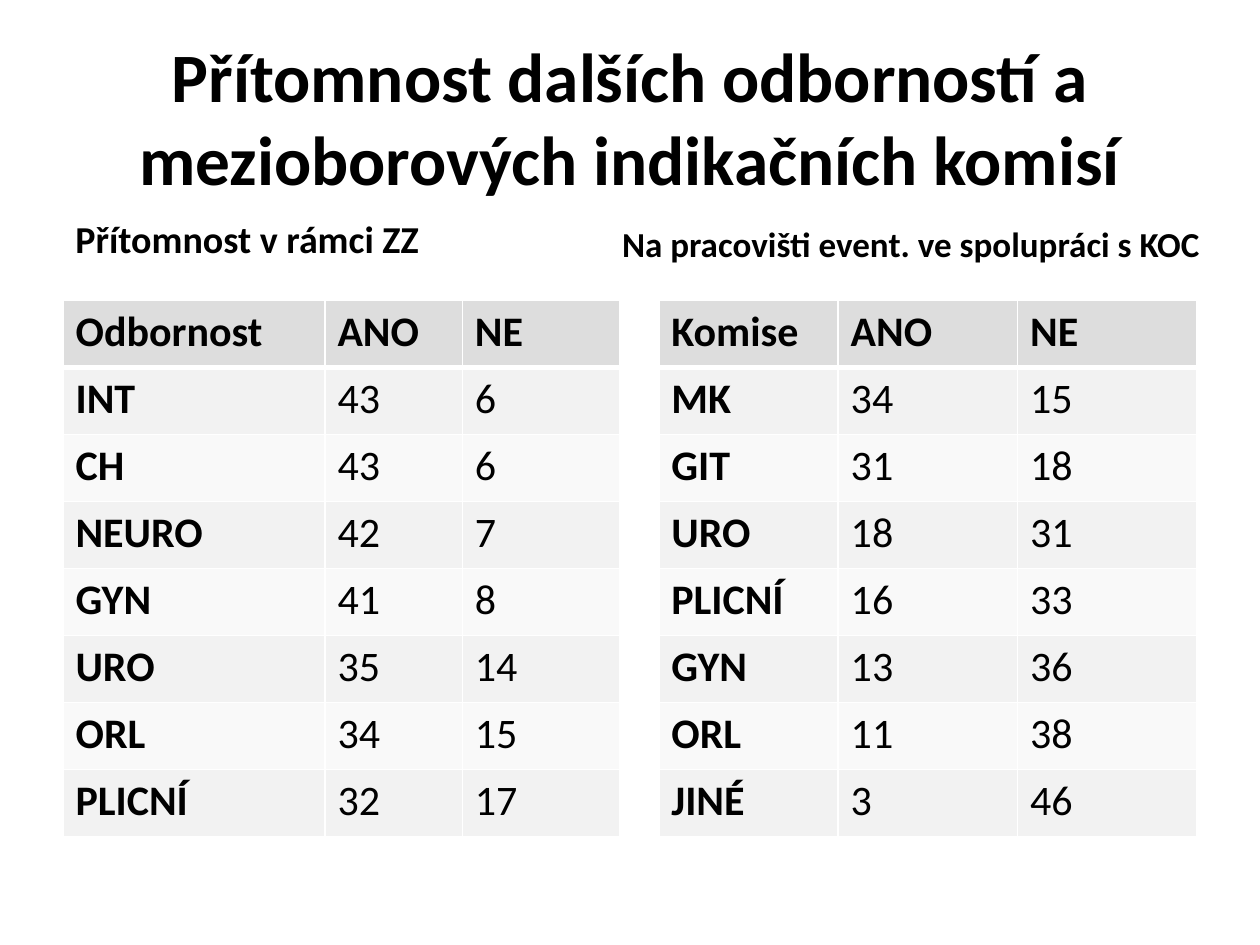
import pptx
import pptx.dml.color
import pptx.enum.text
import pptx.oxml
import pptx.oxml.ns
import pptx.util

Cm, Pt = pptx.util.Cm, pptx.util.Pt
Align = pptx.enum.text.PP_ALIGN
Anchor = pptx.enum.text.MSO_ANCHOR

HUES = {"ink": "000000", "rule": "FFFFFF", "head": "DDDDDD",
        "odd": "F2F2F2", "even": "F9F9F9"}
TITLE = "Přítomnost dalších odborností a mezioborových indikačních komisí"
PANELS = [
    {"text": "Přítomnost v rámci ZZ", "size": 21.7, "inset": 0.78,
     "label": (1.27, 4.27, 11.23, 1.78), "grid": (1.27, 6.05, 11.23, 10.82),
     "parts": (5.28, 2.77, 3.18),
     "rows": [("Odbornost", "ANO", "NE"), ("INT", 43, 6), ("CH", 43, 6),
              ("NEURO", 42, 7), ("GYN", 41, 8), ("URO", 35, 14),
              ("ORL", 34, 15), ("PLICNÍ", 32, 17)]},
    {"text": "Na pracovišti event. ve spolupráci s KOC", "size": 20, "inset": 0.72,
     "label": (12.29, 4.27, 13.11, 1.78), "grid": (13.28, 6.05, 10.85, 10.82),
     "parts": (1, 1, 1),
     "rows": [("Komise", "ANO", "NE"), ("MK", 34, 15), ("GIT", 31, 18),
              ("URO", 18, 31), ("PLICNÍ", 16, 33), ("GYN", 13, 36),
              ("ORL", 11, 38), ("JINÉ", 3, 46)]},
]


def color(name):
    """Return the named colour."""
    return pptx.dml.color.RGBColor.from_string(HUES[name])


def apply(item, values):
    """Set each attribute of item from a dict."""
    for key, value in values.items():
        setattr(item, key, value)


def write(frame, text, size, bold=True, align=Align.LEFT):
    """Fill a text frame with one styled paragraph."""
    para = frame.paragraphs[0]
    para.alignment = align
    run = para.add_run()
    run.text = str(text)
    apply(run.font, {"name": "Calibri", "size": Pt(size), "bold": bold})
    run.font.color.rgb = color("ink")


def add_text(slide, box, text, size, frame, align=Align.LEFT):
    """Place a wrapped text box with the given frame values."""
    shape = slide.shapes.add_textbox(*map(Cm, box))
    apply(shape.text_frame, {"word_wrap": True, **frame})
    write(shape.text_frame, text, size, align=align)


def add_rules(cell, row):
    """Draw the cell borders, thick between head and body."""
    wide = {"L": 1, "R": 1, "T": 3 if row == 1 else 1, "B": 3 if row == 0 else 1}
    for side, width in wide.items():
        cell._tc.get_or_add_tcPr().append(pptx.oxml.parse_xml(
            f'<a:ln{side} {pptx.oxml.ns.nsdecls("a")} w="{Pt(width)}"><a:solidFill>'
            f'<a:srgbClr val="{HUES["rule"]}"/></a:solidFill></a:ln{side}>'))


def add_grid(slide, box, rows, parts):
    """Place a table in the box, with columns split by parts."""
    table = slide.shapes.add_table(len(rows), len(parts), *map(Cm, box)).table
    for col, part in zip(table.columns, parts):
        col.width = Cm(box[2] * part / sum(parts))
    for r, row in enumerate(rows):
        table.rows[r].height = Cm(box[3] / len(rows))
        tone = "head" if r == 0 else "odd" if r % 2 else "even"
        for c, value in enumerate(row):
            cell = table.cell(r, c)
            add_rules(cell, r)
            cell.fill.solid()
            cell.fill.fore_color.rgb = color(tone)
            write(cell.text_frame, value, 24, bold=r == 0 or c == 0)


def add_panel(slide, panel):
    """Place a caption and the table under it."""
    frame = {"vertical_anchor": Anchor.BOTTOM, "margin_bottom": Cm(panel["inset"])}
    add_text(slide, panel["label"], panel["text"], panel["size"], frame)
    add_grid(slide, panel["grid"], panel["rows"], panel["parts"])


def main():
    """Build and save the slide."""
    deck = pptx.Presentation()
    apply(deck, {"slide_width": Cm(25.4), "slide_height": Cm(19.05)})
    slide = deck.slides.add_slide(deck.slide_layouts[6])
    add_text(slide, (1.27, 0.76, 22.86, 3.18), TITLE, 39.6,
             {"vertical_anchor": Anchor.MIDDLE}, Align.CENTER)
    for panel in PANELS:
        add_panel(slide, panel)
    deck.save("out.pptx")


if __name__ == "__main__":
    main()
